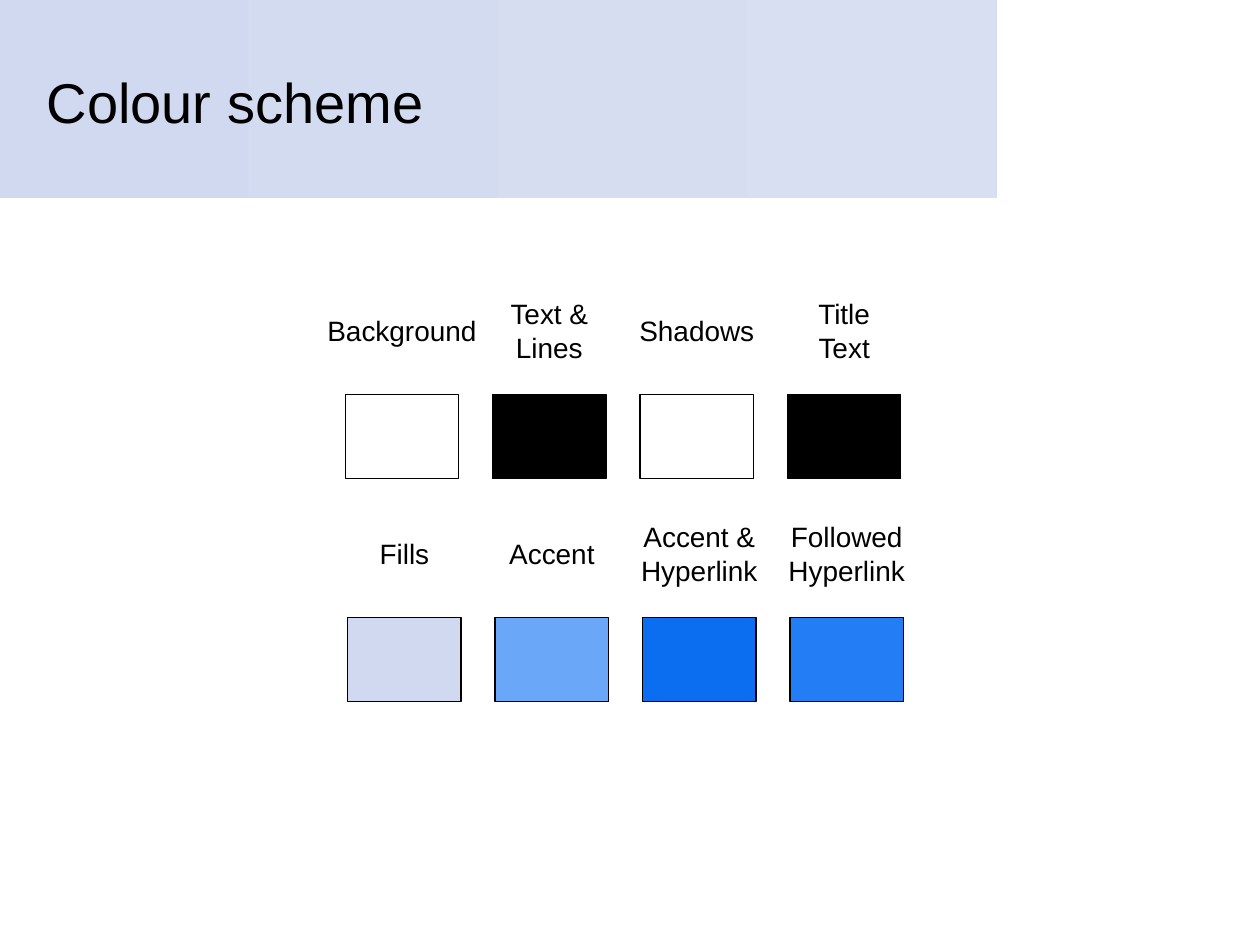
from pptx import Presentation
from pptx.dml.color import RGBColor
from pptx.enum.shapes import MSO_SHAPE as Shape
from pptx.enum.text import MSO_ANCHOR as Anchor, MSO_AUTO_SIZE as Auto, PP_ALIGN as Align
from pptx.util import Inches, Pt

BLACK, WHITE, PALE = "000000", "FFFFFF", "D1D9F0"
PITCH, WIDE, HIGH = 1.17, 0.9, 0.67

# Label, label width, swatch colour
TOP = [
    ("Background", 1.39, WHITE),
    ("Text &\nLines", 0.84, BLACK),
    ("Shadows", 1.11, WHITE),
    ("Title\vText", 0.63, BLACK),
]
LOW = [
    ("Fills", 0.59, PALE),
    ("Accent", 0.88, "6BA7F8"),
    ("Accent &\nHyperlink", 1.12, "0B6DEF"),
    ("Followed\nHyperlink", 1.12, "237DF5"),
]


def color(code):
    return RGBColor.from_string(code)


def write(frame, text, size=16, align=Align.CENTER, wrap=False):
    frame.text = text
    frame.word_wrap = wrap
    frame.auto_size = Auto.NONE
    frame.vertical_anchor = Anchor.MIDDLE
    for para in frame.paragraphs:
        para.alignment = align
        para.font.name = "Arial"
        para.font.size = Pt(size)
        para.font.color.rgb = color(BLACK)


def block(slide, x, y, w, h):
    shape = slide.shapes.add_shape(
        Shape.RECTANGLE, Inches(x), Inches(y), Inches(w), Inches(h))
    shape.shadow.inherit = False
    return shape


def header(slide, x, y, w, h):
    # Gradient band, sent behind the title
    band = block(slide, x, y, w, h)
    band.line.fill.background()
    band.fill.gradient()
    band.fill.gradient_angle = 0
    for stop, code in zip(band.fill.gradient_stops, (PALE, "D8DFF2")):
        stop.color.rgb = color(code)
    slide.shapes.title._element.addprevious(band._element)

    # Title
    title = slide.shapes.title
    title.left, title.top = Inches(x + 0.27), Inches(y + 0.3)
    title.width, title.height = Inches(7.48), Inches(1.01)
    write(title.text_frame, "Colour scheme", size=32, align=Align.LEFT, wrap=True)


def swatches(slide, x, y, items):
    for i, (text, width, code) in enumerate(items):
        left = x + i * PITCH
        # Swatch
        box = block(slide, left, y, WIDE, HIGH)
        box.fill.solid()
        box.fill.fore_color.rgb = color(code)
        box.line.color.rgb = color(BLACK)
        box.line.width = Pt(0.75)

        # Label centred above the swatch
        high = 0.37 if text.isalpha() else 0.64
        label = slide.shapes.add_textbox(
            Inches(left + (WIDE - width) / 2), Inches(y - 0.51 - high / 2),
            Inches(width), Inches(high))
        write(label.text_frame, text)


def main():
    deck = Presentation()
    deck.slide_width, deck.slide_height = Inches(10), Inches(7.5)
    slide = deck.slides.add_slide(deck.slide_layouts[5])
    header(slide, 0, 0, 7.91, 1.57)
    swatches(slide, 2.74, 3.13, TOP)
    swatches(slide, 2.76, 4.9, LOW)
    deck.save("out.pptx")


if __name__ == "__main__":
    main()
